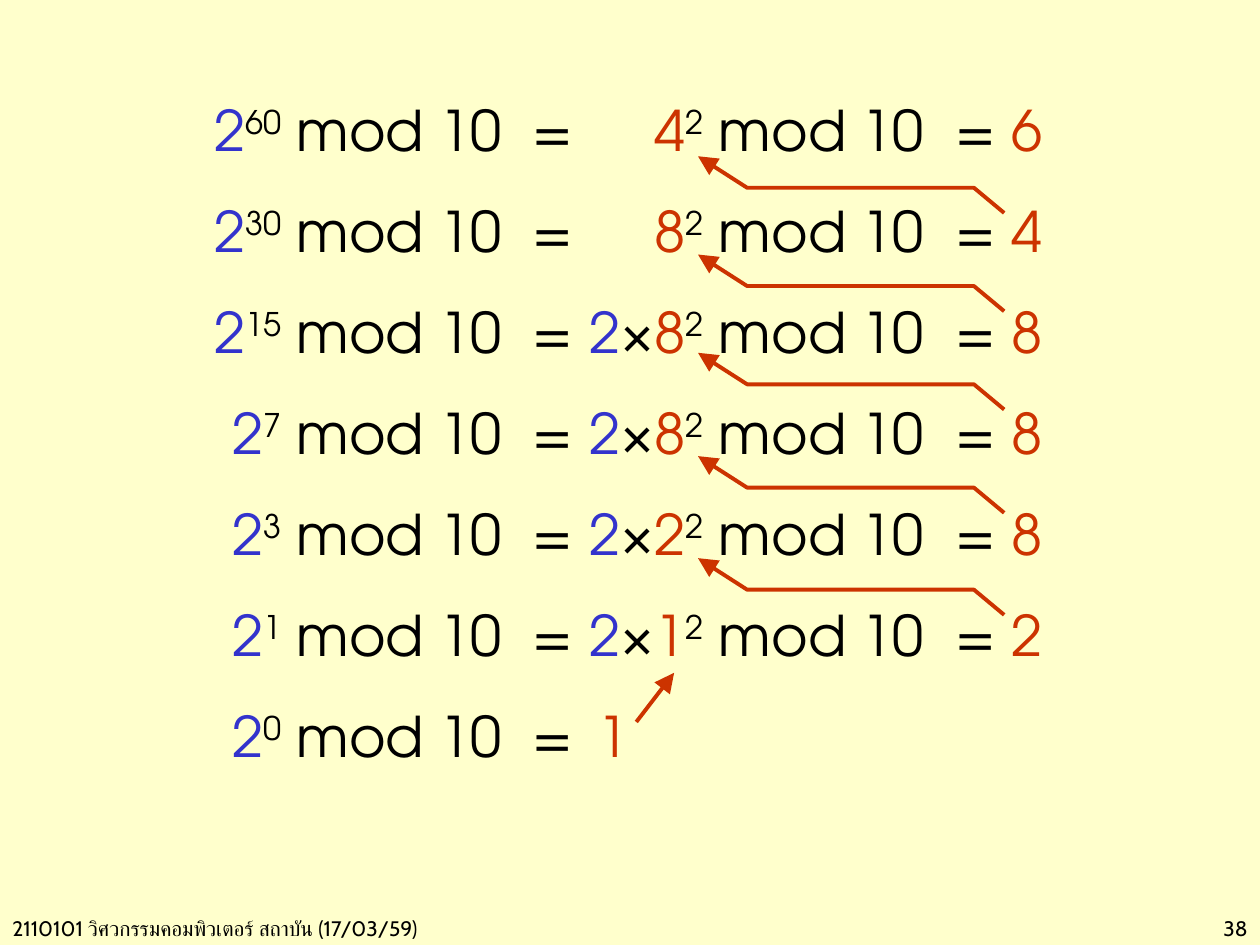
from lxml.etree import SubElement
from pptx import Presentation
from pptx.dml.color import RGBColor
from pptx.enum.shapes import MSO_CONNECTOR
from pptx.enum.text import PP_ALIGN
from pptx.oxml.ns import qn
from pptx.util import Inches, Pt

CREAM = RGBColor(0xFF, 0xFF, 0xCC)
BLACK = RGBColor(0x00, 0x00, 0x00)
BLUE = RGBColor(0x33, 0x33, 0xCC)
RED = RGBColor(0xCC, 0x33, 0x00)

MATH_FONT = "TeX Gyre Adventor"
FOOTER_FONT = "Cabin"

FIRST_ROW, LAST_ROW = 0.71, 5.52
ROW_HEIGHT = 0.63
POWER_COLUMN = (1.26, 3.39)
SQUARE_COLUMN = (4.53, 3.84)
BASE_CASE_COLUMN = (4.64, 0.57)

STEPS = [
    ("60", False, "4", "6"),
    ("30", False, "8", "4"),
    ("15", True, "8", "8"),
    ("7", True, "8", "8"),
    ("3", True, "2", "8"),
    ("1", True, "1", "2"),
]
CARRY_TOPS = [1.24, 2.02, 2.8, 3.62, 4.43]
CARRY_BENDS = [(7.97, 0.45), (7.73, 0.25), (5.93, 0.25), (5.54, 0)]


def row_top(row):
    return FIRST_ROW + row * (LAST_ROW - FIRST_ROW) / len(STEPS)


def add_text(slide, column, top, height, pieces, font, size, align):
    left, width = column
    box = slide.shapes.add_textbox(
        Inches(left), Inches(top), Inches(width), Inches(height))
    box.text_frame.word_wrap = True
    paragraph = box.text_frame.paragraphs[0]
    paragraph.alignment = align
    paragraph.font.name = font
    paragraph.font.size = Pt(size)
    for wording, color, raised in pieces:
        run = paragraph.add_run()
        run.text = wording
        run.font.color.rgb = color
        if raised:
            run.font._element.set("baseline", "30000")


def add_formula(slide, column, row, pieces, align=PP_ALIGN.RIGHT):
    add_text(slide, column, row_top(row), ROW_HEIGHT, pieces, MATH_FONT, 32, align)


def add_power(slide, row, exponent):
    add_formula(slide, POWER_COLUMN, row, [
        ("2", BLUE, False), (exponent, BLACK, True), (" mod 10  =", BLACK, False)])


def add_square(slide, row, doubled, remainder, result):
    factor = [("2", BLUE, False), ("×", BLACK, False)] if doubled else []
    add_formula(slide, SQUARE_COLUMN, row, factor + [
        (remainder, RED, False), ("2", BLACK, True),
        (" mod 10  = ", BLACK, False), (result, RED, False)])


def style_arrow(arrow):
    arrow.line.color.rgb = RED
    arrow.line.width = Pt(2.25)
    SubElement(arrow.line._get_or_add_ln(), qn("a:tailEnd"),
               type="triangle", w="lg", len="lg")


def add_carry_arrow(slide, top):
    start, *bends = [(Inches(x), Inches(top + drop)) for x, drop in CARRY_BENDS]
    builder = slide.shapes.build_freeform(*start, scale=1.0)
    builder.add_line_segments(bends, close=False)
    arrow = builder.convert_to_shape()
    arrow.fill.background()
    arrow.shadow.inherit = False
    style_arrow(arrow)


def add_base_case_arrow(slide):
    arrow = slide.shapes.add_connector(
        MSO_CONNECTOR.STRAIGHT,
        Inches(5.05), Inches(5.73), Inches(5.35), Inches(5.34))
    style_arrow(arrow)
    SubElement(arrow._element.spPr, qn("a:effectLst"))


def add_footer(slide, column, wording, align):
    add_text(slide, column, 7.22, 0.3, [(wording, BLACK, False)],
             FOOTER_FONT, 12, align)


def main():
    deck = Presentation()
    deck.slide_width, deck.slide_height = Inches(10), Inches(7.5)
    slide = deck.slides.add_slide(deck.slide_layouts[6])
    slide.background.fill.solid()
    slide.background.fill.fore_color.rgb = CREAM

    add_footer(slide, (0, 3.9), "2110101 วิศวกรรมคอมพิวเตอร์ สถาบัน (17/03/59)",
               PP_ALIGN.LEFT)
    add_footer(slide, (8.62, 1.38), "38", PP_ALIGN.RIGHT)

    for row, (exponent, doubled, remainder, result) in enumerate(STEPS):
        add_power(slide, row, exponent)
        add_square(slide, row, doubled, remainder, result)
    add_power(slide, len(STEPS), "0")
    add_formula(slide, BASE_CASE_COLUMN, len(STEPS), [("1", RED, False)],
                PP_ALIGN.LEFT)

    add_base_case_arrow(slide)
    for top in CARRY_TOPS:
        add_carry_arrow(slide, top)
    deck.save("out.pptx")


if __name__ == "__main__":
    main()
